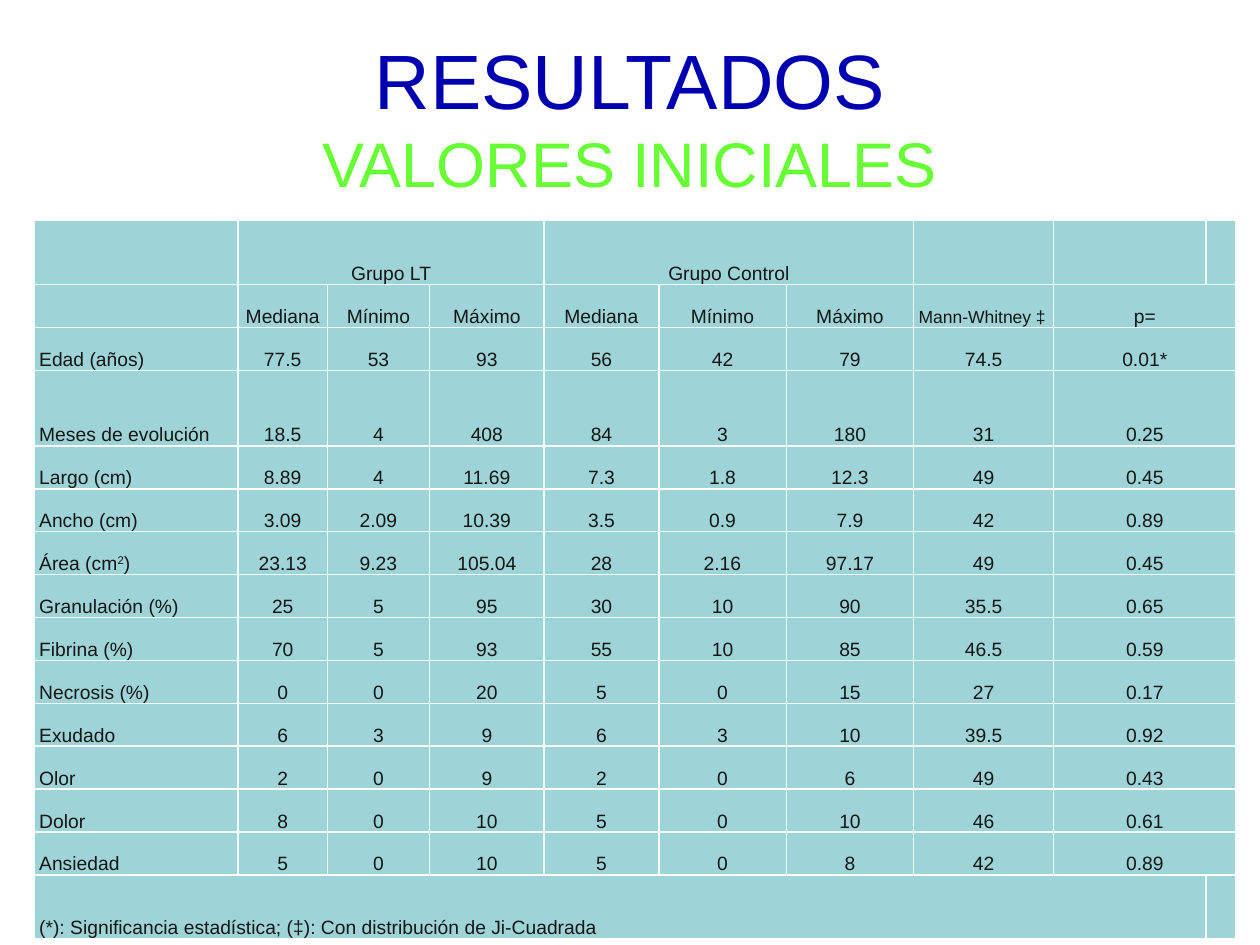
"""Builds the slide of initial values for the LT and control groups."""
from lxml import etree
from pptx import Presentation
from pptx.dml.color import RGBColor
from pptx.enum.text import MSO_ANCHOR, MSO_AUTO_SIZE, PP_ALIGN
from pptx.oxml.ns import qn
from pptx.util import Cm, Pt

LEFT, CENTER, JUSTIFY = PP_ALIGN.LEFT, PP_ALIGN.CENTER, PP_ALIGN.JUSTIFY
BOTTOM, MIDDLE = MSO_ANCHOR.BOTTOM, MSO_ANCHOR.MIDDLE
NO_FIT = MSO_AUTO_SIZE.NONE

NAVY = RGBColor(0x01, 0x00, 0xB0)
GREEN = RGBColor(0x66, 0xFF, 0x33)
TEAL = RGBColor(0x9E, 0xD3, 0xD7)
INK = RGBColor(0x16, 0x16, 0x16)
WHITE = RGBColor(0xFF, 0xFF, 0xFF)

FONT = "Arial"
BODY_SIZE, TEST_SIZE, BLANK_SIZE = 11, 10, 24
COLUMN_WIDTHS = [4.11, 1.8, 2.06, 2.31, 2.31, 2.57, 2.57, 2.82, 3.07, 0.2]
ROW_HEIGHT, EDGE_HEIGHT, TALL_HEIGHT = 0.76, 0.91, 1.52
CELL_FORMAT = {
    "vertical_anchor": BOTTOM,
    "margin_left": Cm(0.1),
    "margin_right": Cm(0.1),
    "margin_top": 0,
    "margin_bottom": 0,
}

GROUPS = {1: "Grupo LT", 4: "Grupo Control"}
TEST_NAME = "Mann-Whitney ‡"
HEADINGS = ["", *["Mediana", "Mínimo", "Máximo"] * 2, TEST_NAME, "p="]
TALL_MEASURE = "Meses de evolución"
MEASURES = [
    ("Edad (años)", "77.5 53 93 56 42 79 74.5 0.01*"),
    (TALL_MEASURE, "18.5 4 408 84 3 180 31 0.25"),
    ("Largo (cm)", "8.89 4 11.69 7.3 1.8 12.3 49 0.45"),
    ("Ancho (cm)", "3.09 2.09 10.39 3.5 0.9 7.9 42 0.89"),
    ("Área (cm^2^)", "23.13 9.23 105.04 28 2.16 97.17 49 0.45"),
    ("Granulación (%)", "25 5 95 30 10 90 35.5 0.65"),
    ("Fibrina (%)", "70 5 93 55 10 85 46.5 0.59"),
    ("Necrosis (%)", "0 0 20 5 0 15 27 0.17"),
    ("Exudado", "6 3 9 6 3 10 39.5 0.92"),
    ("Olor", "2 0 9 2 0 6 49 0.43"),
    ("Dolor", "8 0 10 5 0 10 46 0.61"),
    ("Ansiedad", "5 0 10 5 0 8 42 0.89"),
]
FOOTNOTE = "(*): Significancia estadística; (‡): Con distribución de Ji-Cuadrada"


def apply_format(target, values):
    """Set every attribute in values on target."""
    for name, value in values.items():
        setattr(target, name, value)


def add_run(paragraph, text, size, color):
    """Append a formatted run and return it."""
    run = paragraph.add_run()
    run.text = text
    apply_format(run.font, {"name": FONT, "size": Pt(size)})
    run.font.color.rgb = color
    return run


def set_blank_size(cell, size):
    """Set the text height of an empty cell."""
    mark = etree.SubElement(cell.text_frame.paragraphs[0]._p, qn("a:endParaRPr"))
    mark.set("sz", str(size * 100))


def write_cell(cell, text, align=CENTER, size=BODY_SIZE):
    """Write text at the foot of a cell, with ^ around superscripts."""
    apply_format(cell, CELL_FORMAT)
    paragraph = cell.text_frame.paragraphs[0]
    apply_format(paragraph, {"alignment": align, "line_spacing": 2.0})
    if not text:
        set_blank_size(cell, size)
        return
    for index, part in enumerate(text.split("^")):
        run = add_run(paragraph, part, size, INK)
        if index % 2:
            run._r.get_or_add_rPr().set("baseline", "30000")


def paint_cell(cell):
    """Give a cell white borders and a teal fill."""
    properties = cell._tc.get_or_add_tcPr()
    for side in ("a:lnL", "a:lnR", "a:lnT", "a:lnB"):
        line = etree.SubElement(properties, qn(side), w=str(Pt(1)))
        fill = etree.SubElement(line, qn("a:solidFill"))
        etree.SubElement(fill, qn("a:srgbClr"), val=str(WHITE))
    cell.fill.solid()
    cell.fill.fore_color.rgb = TEAL


def fill_title(title):
    """Place the title and write its two lines."""
    apply_format(title, {"left": Cm(1.27), "top": Cm(0.76),
                         "width": Cm(22.86), "height": Cm(3.18)})
    apply_format(title.text_frame, {"auto_size": NO_FIT, "vertical_anchor": MIDDLE})
    paragraph = title.text_frame.paragraphs[0]
    paragraph.alignment = CENTER
    add_run(paragraph, "RESULTADOS", 44, NAVY)
    paragraph.add_line_break()
    add_run(paragraph, "VALORES INICIALES", 36, GREEN)


def add_results(slide):
    """Add the table of medians, ranges and tests."""
    body = [HEADINGS] + [[name, *values.split()] for name, values in MEASURES]
    heights = [TALL_HEIGHT if row[0] == TALL_MEASURE else ROW_HEIGHT for row in body]
    heights = [EDGE_HEIGHT, *heights, EDGE_HEIGHT]
    table = slide.shapes.add_table(
        len(heights), len(COLUMN_WIDTHS), Cm(0.69), Cm(4.45),
        Cm(sum(COLUMN_WIDTHS)), Cm(sum(heights))).table
    for column, width in zip(table.columns, COLUMN_WIDTHS):
        column.width = Cm(width)
    for row, height in zip(table.rows, heights):
        row.height = Cm(height)
    for cell in table.iter_cells():
        paint_cell(cell)

    last_row, last_column = len(heights) - 1, len(COLUMN_WIDTHS) - 1
    for column, group in GROUPS.items():
        table.cell(0, column).merge(table.cell(0, column + 2))
        write_cell(table.cell(0, column), group)
    for row, texts in enumerate(body, start=1):
        table.cell(row, last_column - 1).merge(table.cell(row, last_column))
        for column, text in enumerate(texts):
            if text == TEST_NAME:
                write_cell(table.cell(row, column), text, JUSTIFY, TEST_SIZE)
            else:
                write_cell(table.cell(row, column), text, CENTER if column else LEFT)
    table.cell(last_row, 0).merge(table.cell(last_row, last_column - 1))
    write_cell(table.cell(last_row, 0), FOOTNOTE, LEFT)
    for row, column in [(0, 0), (0, 7), (0, 8), (0, last_column), (last_row, last_column)]:
        set_blank_size(table.cell(row, column), BLANK_SIZE)


def main():
    """Build and save the presentation."""
    presentation = Presentation()
    apply_format(presentation, {"slide_width": Cm(25.4), "slide_height": Cm(19.05)})
    slide = presentation.slides.add_slide(presentation.slide_layouts[5])
    fill_title(slide.shapes.title)
    add_results(slide)
    presentation.save("out.pptx")


if __name__ == "__main__":
    main()
